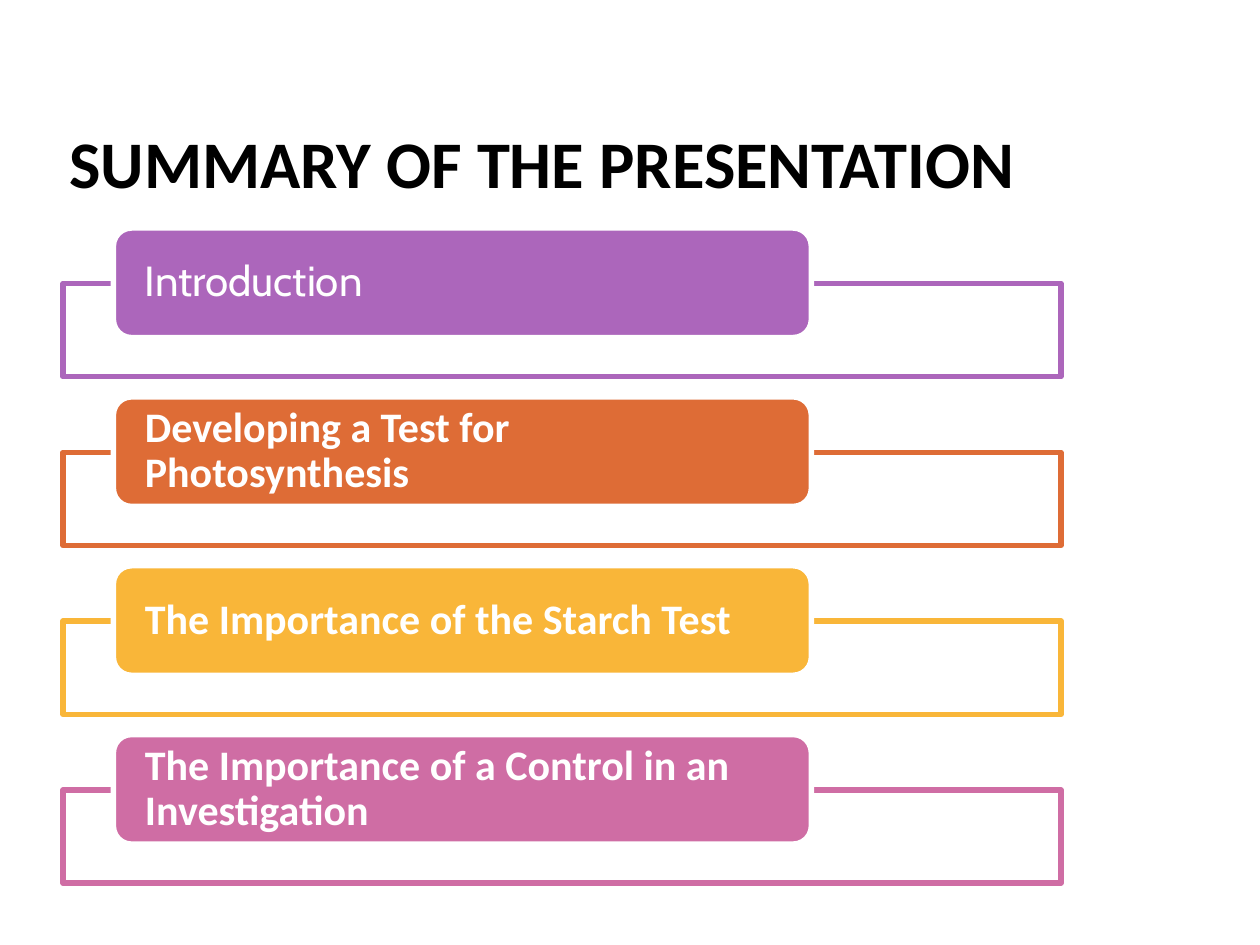
"""Build the summary slide: a title above four colour-coded topic bars."""
from lxml.etree import SubElement
from pptx import Presentation
from pptx.dml.color import RGBColor
from pptx.enum.shapes import MSO_SHAPE as Shape
from pptx.enum.text import MSO_ANCHOR as Anchor, PP_ALIGN as Align
from pptx.oxml.ns import qn
from pptx.util import Pt

TITLE = "SUMMARY OF THE PRESENTATION"
TOPICS = [
    ("Introduction", "purple", "Cabin", False),
    ("Developing a Test for Photosynthesis", "orange", "Calibri", True),
    ("The Importance of the Starch Test", "yellow", "Calibri", True),
    ("The Importance of a Control in an Investigation", "pink", "Calibri", True),
]
COLOURS = {
    "black": "000000",
    "white": "FFFFFF",
    "purple": "AC66BB",
    "orange": "DE6C36",
    "yellow": "F9B639",
    "pink": "CF6DA4",
}
LEFT, WIDTH = 36, 570.24
FRAME_TOP, FRAME_HEIGHT = 162, 53.28
LABEL_LEFT, LABEL_TOP, LABEL_WIDTH, LABEL_HEIGHT = 64.8, 130.32, 398.88, 62.64
PITCH = 96.48
BORDER = 3.15


def colour(name):
    return RGBColor.from_string(COLOURS[name])


def write(shape, words, size, font, bold, ink, anchor, inset):
    frame = shape.text_frame
    frame.word_wrap = True
    frame.vertical_anchor = anchor
    frame.margin_left = frame.margin_right = Pt(inset)
    frame.margin_top = frame.margin_bottom = 0
    paragraph = frame.paragraphs[0]
    paragraph.alignment = Align.LEFT
    run = paragraph.add_run()
    run.text = words
    run.font.size = Pt(size)
    run.font.name = font
    run.font.bold = bold
    run.font.color.rgb = colour(ink)
    return paragraph


def add_box(slide, preset, left, top, width, height, fill, line):
    box = slide.shapes.add_shape(preset, Pt(left), Pt(top), Pt(width), Pt(height))
    box.shadow.inherit = False
    box.fill.solid()
    box.fill.fore_color.rgb = colour(fill)
    box.line.color.rgb = colour(line)
    box.line.width = Pt(BORDER)
    return box


def add_topic(slide, row, words, hue, font, bold):
    drop = row * PITCH
    frame = add_box(slide, Shape.RECTANGLE, LEFT, FRAME_TOP + drop,
                    WIDTH, FRAME_HEIGHT, "white", hue)
    tint = frame.fill._xPr.find(qn("a:solidFill"))[0]
    SubElement(tint, qn("a:alpha"), val="90000")
    label = add_box(slide, Shape.ROUNDED_RECTANGLE, LABEL_LEFT, LABEL_TOP + drop,
                    LABEL_WIDTH, LABEL_HEIGHT, hue, "white")
    paragraph = write(label, words, 24, font, bold, "white", Anchor.MIDDLE, 15)
    paragraph.line_spacing = 0.9


def main():
    deck = Presentation()
    deck.slide_width, deck.slide_height = Pt(720), Pt(540)
    slide = deck.slides.add_slide(deck.slide_layouts[6])
    heading = slide.shapes.add_textbox(Pt(LEFT), Pt(25.2), Pt(WIDTH), Pt(90))
    write(heading, TITLE, 38, "Calibri", True, "black", Anchor.BOTTOM, 3.6)
    for row, topic in enumerate(TOPICS):
        add_topic(slide, row, *topic)
    deck.save("out.pptx")


if __name__ == "__main__":
    main()
